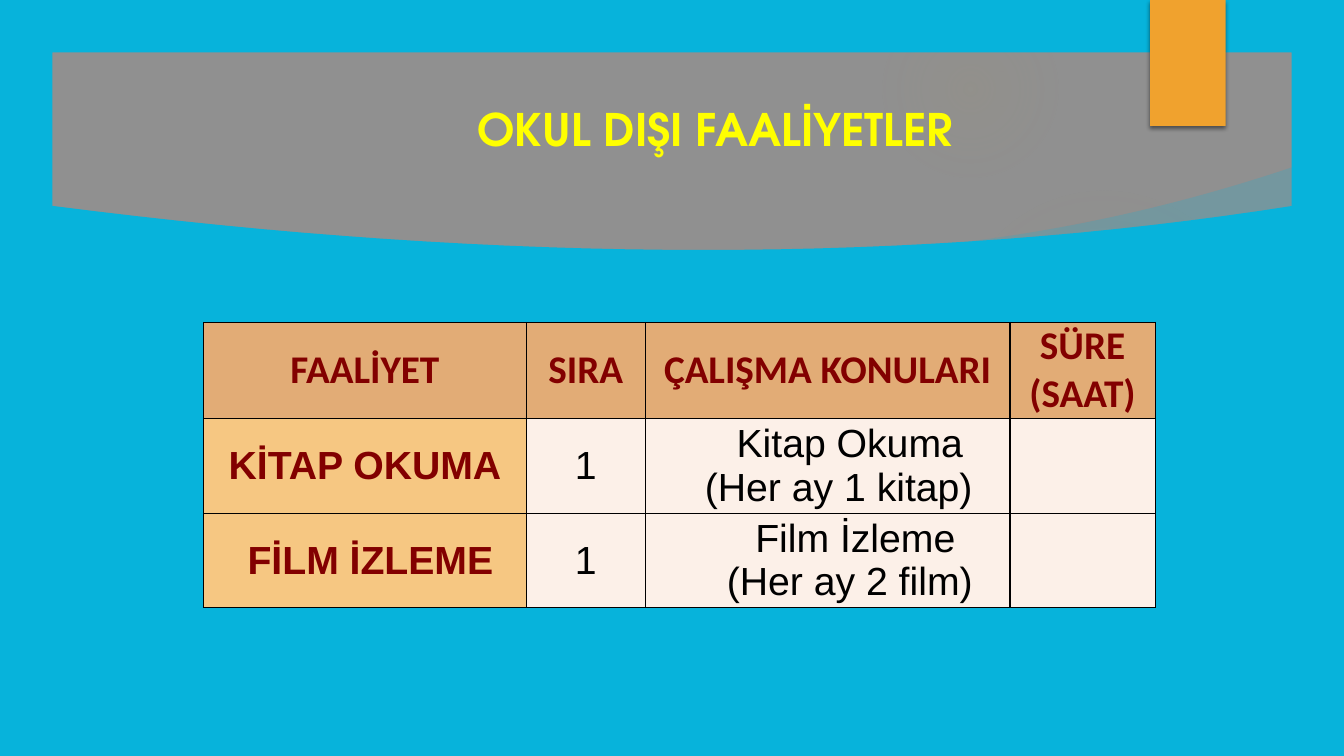
from lxml import etree
from pptx import Presentation
from pptx.dml.color import RGBColor
from pptx.enum.shapes import MSO_SHAPE
from pptx.enum.text import MSO_ANCHOR, PP_ALIGN
from pptx.oxml import parse_xml
from pptx.util import Inches, Pt

RECT, OVAL = MSO_SHAPE.RECTANGLE, MSO_SHAPE.OVAL
MID, CENTER = MSO_ANCHOR.MIDDLE, PP_ALIGN.CENTER
NS = "http://schemas.openxmlformats.org/drawingml/2006/main"
COLS, ROWS = 133.33, 75
THEME = {
    "back": "909090", "blue": "07B3DB", "tab": "F0A22E", "glow": "A19574",
    "head": "E2AC76", "side": "F6C782", "body": "FCF0E8", "rule": "000000",
    "title": {"name": "TeX Gyre Adventor", "size": 32, "bold": True, "color": "FFFF00"},
    "top": {"name": "Calibri", "size": 28, "bold": True, "color": "820000"},
    "label": {"name": "Arial", "size": 28, "bold": True, "color": "820000"},
    "text": {"name": "Arial", "size": 28, "bold": False, "color": "000000"},
}
HEADS = [["FAALİYET"], ["SIRA"], ["ÇALIŞMA KONULARI"], ["SÜRE", "(SAAT)"]]
TASKS = [
    [["KİTAP OKUMA"], ["1"], ["Kitap Okuma", "(Her ay 1 kitap)"], []],
    [["FİLM İZLEME"], ["1"], ["Film İzleme", "(Her ay 2 film)"], []],
]
SHIFTS = {"Kitap Okuma": 4, "(Her ay 1 kitap)": 2, "FİLM İZLEME": 1,
          "Film İzleme": 5, "(Her ay 2 film)": 4}
SPACE = 0.11


def grid(*cells):
    return [Inches(cell / 10) for cell in cells]


def rgb(name):
    return RGBColor.from_string(THEME[name])


def style(font, look):
    values = {**look, "size": Pt(look["size"])}
    font.color.rgb = RGBColor.from_string(values.pop("color"))
    for key, value in values.items():
        setattr(font, key, value)


def paint(shape, color):
    shape.shadow.inherit = False
    shape.fill.solid()
    shape.fill.fore_color.rgb = rgb(color)
    shape.line.fill.background()
    return shape


def curve(start, bend, end, steps=32):
    parts = [n / steps for n in range(steps + 1)]
    return [tuple((1 - t) ** 2 * a + 2 * t * (1 - t) * b + t * t * c
                  for a, b, c in zip(start, bend, end)) for t in parts]


def outline(slide, box, *loops):
    left, top = box[:2]
    loops = [[grid(left + x, top + y) for x, y in loop] for loop in loops]
    pen = slide.shapes.build_freeform(*loops[0][0])
    for index, loop in enumerate(loops):
        if index:
            pen.move_to(*loop[0])
        pen.add_line_segments(loop[1:], close=True)
    return paint(pen.convert_to_shape(), "blue")


def glow(slide, box, stops):
    shape = paint(slide.shapes.add_shape(OVAL, *grid(*box)), "glow")
    marks = "".join(
        f'<a:gs pos="{pos * 1000}"><a:srgbClr val="{THEME["glow"]}">'
        f'<a:alpha val="{alpha * 1000}"/></a:srgbClr></a:gs>' for pos, alpha in stops)
    fill = parse_xml(
        f'<a:gradFill xmlns:a="{NS}"><a:gsLst>{marks}</a:gsLst><a:path path="circle">'
        '<a:fillToRect l="50000" t="50000" r="50000" b="50000"/></a:path></a:gradFill>')
    props = shape._element.spPr
    props.replace(props.find(f"{{{NS}}}solidFill"), fill)


def wedge(slide, box):
    w, h = box[2:]
    shape = outline(slide, box, curve((0, 0.92 * h), (0.5 * w, 0.69 * h), (0.98 * w, 0))
                    + curve((w, 0.57 * h), (0.53 * w, 0.94 * h), (0.01 * w, h)))
    tint = shape._element.spPr.find(f"{{{NS}}}solidFill")[0]
    etree.SubElement(tint, f"{{{NS}}}alpha", val="20000")


def panel(slide, box):
    w, h = box[2:]
    outline(slide, box, [(0, h)] + curve((0, 0), (0.55 * w, 8.8), (w, 0)) + [(w, h)])


def frame(slide, box, edge):
    w, h = box[2:]
    outline(slide, box, [(0, 0), (0, h), (w, h), (w, 0)],
            [(edge, edge), (w - edge, edge), (w - edge, h - edge), (edge, h - edge)])


def ribbon(slide, box):
    shape = paint(slide.shapes.add_shape(RECT, *grid(*box)), "tab")
    effect = shape._element.spPr.find(f"{{{NS}}}effectLst")
    effect.append(parse_xml(
        f'<a:outerShdw xmlns:a="{NS}" blurRad="{Pt(3)}" dist="{Pt(2)}" dir="5400000" '
        'algn="tl" rotWithShape="0"><a:srgbClr val="000000"><a:alpha val="45000"/>'
        '</a:srgbClr></a:outerShdw>'))


def title(slide, box, words):
    body = slide.shapes.add_textbox(*grid(*box)).text_frame
    body.word_wrap = True
    body.vertical_anchor = MID
    para = body.paragraphs[0]
    para.text, para.alignment = words, CENTER
    style(para.runs[0].font, THEME["title"])


def fill_cell(cell, lines, color, look):
    layout = {"vertical_anchor": MID, "margin_left": 0, "margin_right": 0,
              "margin_top": 0, "margin_bottom": 0}
    for key, value in layout.items():
        setattr(cell, key, value)
    cell.fill.solid()
    cell.fill.fore_color.rgb = rgb(color)
    props = cell._tc.get_or_add_tcPr()
    for index, side in enumerate("LRTB"):
        props.insert(index, parse_xml(
            f'<a:ln{side} xmlns:a="{NS}" w="{Pt(1)}"><a:solidFill>'
            f'<a:srgbClr val="{THEME["rule"]}"/></a:solidFill></a:ln{side}>'))
    body = cell.text_frame
    for index, line in enumerate(lines):
        para = body.add_paragraph() if index else body.paragraphs[0]
        para.text, para.alignment = line, CENTER
        if line in SHIFTS:
            para._p.get_or_add_pPr().set("marL", str(Inches(SHIFTS[line] * SPACE)))
        style(para.runs[0].font, THEME[look])


def schedule(slide, box, widths):
    rows = [HEADS] + TASKS
    table = slide.shapes.add_table(len(rows), len(widths), *grid(*box)).table
    table.first_row = table.horz_banding = False
    for column, width in zip(table.columns, grid(*widths)):
        column.width = width
    for r, row in enumerate(rows):
        table.rows[r].height = grid(box[3] / len(rows))[0]
        for c, lines in enumerate(row):
            if r == 0:
                color, look = "head", "top"
            elif c == 0:
                color, look = "side", "label"
            else:
                color, look = "body", "text"
            fill_cell(table.cell(r, c), lines, color, look)


def main():
    deck = Presentation()
    deck.slide_width, deck.slide_height = grid(COLS, ROWS)
    slide = deck.slides.add_slide(deck.slide_layouts[6])
    back = slide.background.fill
    back.solid()
    back.fore_color.rgb = rgb("back")
    glow(slide, (94.1, 18.3, 30.8, 30.8), [(0, 7), (36, 6), (69, 0), (100, 0)])
    glow(slide, (87.5, 0.1, 17.5, 17.5), [(0, 14), (36, 7), (73, 0), (100, 0)])
    wedge(slide, (93, 16.6, 35.9, 8.4))
    panel(slide, (5, 20.4, 123.4, 49.6))
    frame(slide, (0, 0, COLS, ROWS), 5.2)
    ribbon(slide, (114.1, 0, 7.5, 12.5))
    schedule(slide, (20.2, 32, 94.4, 28.2), (32, 11.8, 36.2, 14.4))
    title(slide, (43, 7.6, 55.9, 10.3), "OKUL DIŞI FAALİYETLER")
    deck.save("out.pptx")


if __name__ == "__main__":
    main()
